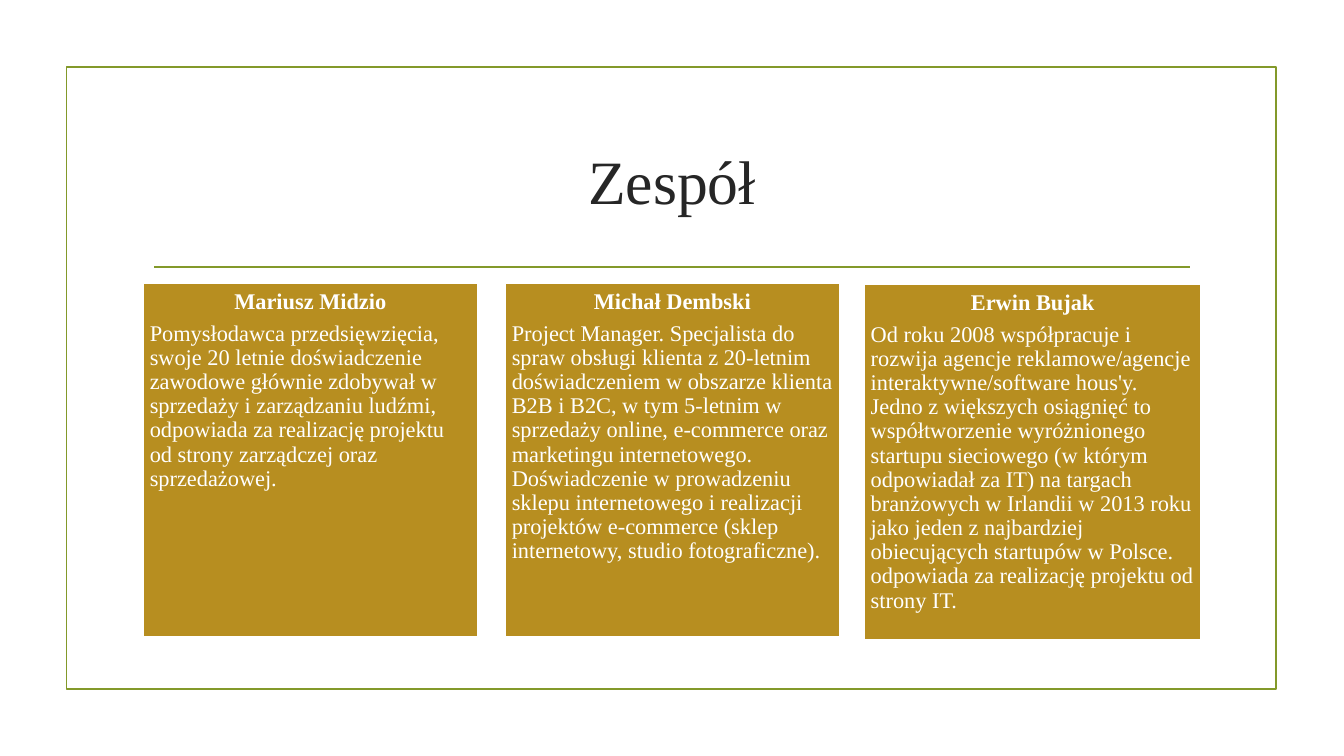
from dataclasses import dataclass

from pptx import Presentation
from pptx.dml.color import RGBColor
from pptx.enum.shapes import MSO_CONNECTOR, MSO_SHAPE
from pptx.enum.text import MSO_ANCHOR, MSO_AUTO_SIZE, PP_ALIGN
from pptx.oxml.ns import qn
from pptx.util import Pt
from lxml import etree

RECTANGLE = MSO_SHAPE.RECTANGLE
STRAIGHT = MSO_CONNECTOR.STRAIGHT
TOP, MIDDLE = MSO_ANCHOR.TOP, MSO_ANCHOR.MIDDLE
LEFT, CENTER = PP_ALIGN.LEFT, PP_ALIGN.CENTER
NO_AUTOFIT = MSO_AUTO_SIZE.NONE


@dataclass(frozen=True)
class Theme:
    font: str = "Times New Roman"
    olive: RGBColor = RGBColor(0x83, 0x99, 0x2A)
    gold: RGBColor = RGBColor(0xB7, 0x8E, 0x20)
    white: RGBColor = RGBColor(0xFF, 0xFF, 0xFF)
    ink: RGBColor = RGBColor(0x26, 0x26, 0x26)
    title_size: float = 44
    body_size: float = 16
    line_width: float = 1.25


THEME = Theme()
FRAME_BOX = (47.6, 48, 864, 444.4)
TITLE_BOX = (102.2, 77, 756, 103)
TEAM = [
    ((102.2, 202.3, 239, 252.9), "Mariusz Midzio",
     "Pomysłodawca przedsięwzięcia, swoje 20 letnie doświadczenie zawodowe "
     "głównie zdobywał w sprzedaży i zarządzaniu ludźmi, odpowiada za "
     "realizację projektu od strony zarządczej oraz sprzedażowej."),
    ((360.8, 202.3, 239, 252.9), "Michał Dembski",
     "Project Manager. Specjalista do spraw obsługi klienta z 20-letnim "
     "doświadczeniem w obszarze klienta B2B i B2C, w tym 5-letnim w sprzedaży "
     "online, e-commerce oraz marketingu internetowego. Doświadczenie w "
     "prowadzeniu sklepu internetowego i realizacji projektów e-commerce "
     "(sklep internetowy, studio fotograficzne)."),
    ((617.2, 203, 241, 254), "Erwin Bujak",
     "Od roku 2008 współpracuje i rozwija agencje reklamowe/agencje "
     "interaktywne/software hous'y. Jedno z większych osiągnięć to "
     "współtworzenie wyróżnionego startupu sieciowego (w którym odpowiadał za "
     "IT) na targach branżowych w Irlandii w 2013 roku jako jeden z najbardziej "
     "obiecujących startupów w Polsce. odpowiada za realizację projektu od "
     "strony IT."),
]


def style_font(font, size, color, bold=False):
    font.name = THEME.font
    font.size = Pt(size)
    font.bold = bold
    font.color.rgb = color


def add_box(slide, box, line_color):
    shape = slide.shapes.add_shape(RECTANGLE, *map(Pt, box))
    shape.shadow.inherit = False
    shape.line.color.rgb = line_color
    shape.line.width = Pt(THEME.line_width)
    return shape


def add_frame(slide, box):
    add_box(slide, box, THEME.olive).fill.background()


def add_heading(slide, box, text):
    left, top, width, height = box
    title = slide.shapes.title
    title.left, title.top, title.width, title.height = map(Pt, box)
    text_frame = title.text_frame
    text_frame.text = text
    text_frame.vertical_anchor = MIDDLE
    text_frame.auto_size = NO_AUTOFIT
    paragraph = text_frame.paragraphs[0]
    paragraph.alignment = CENTER
    style_font(paragraph.font, THEME.title_size, THEME.ink)

    rule_y = top + height + 10.8
    rule = slide.shapes.add_connector(
        STRAIGHT, Pt(left + 8), Pt(rule_y), Pt(left + width - 8), Pt(rule_y))
    rule.line.color.rgb = THEME.olive
    rule.line.width = Pt(THEME.line_width)
    etree.SubElement(rule.element.spPr, qn("a:effectLst"))


def add_member_card(slide, box, name, biography):
    card = add_box(slide, box, THEME.white)
    card.fill.solid()
    card.fill.fore_color.rgb = THEME.gold
    text_frame = card.text_frame
    text_frame.word_wrap = True
    text_frame.vertical_anchor = TOP
    text_frame.margin_left = text_frame.margin_right = Pt(4.8)
    text_frame.margin_top = text_frame.margin_bottom = Pt(4.8)
    text_frame.text = f"{name}\n{biography}"
    for paragraph, alignment, bold in zip(
            text_frame.paragraphs, (CENTER, LEFT), (True, False)):
        paragraph.alignment = alignment
        paragraph.line_spacing = 0.9
        paragraph.space_after = Pt(5.6)
        style_font(paragraph.font, THEME.body_size, THEME.white, bold)


def build_team_slide(presentation):
    slide = presentation.slides.add_slide(presentation.slide_layouts[5])
    add_frame(slide, FRAME_BOX)
    add_heading(slide, TITLE_BOX, "Zespół")
    for box, name, biography in TEAM:
        add_member_card(slide, box, name, biography)


def main():
    presentation = Presentation()
    presentation.slide_width = Pt(960)
    presentation.slide_height = Pt(540)
    build_team_slide(presentation)
    presentation.save("out.pptx")


if __name__ == "__main__":
    main()
